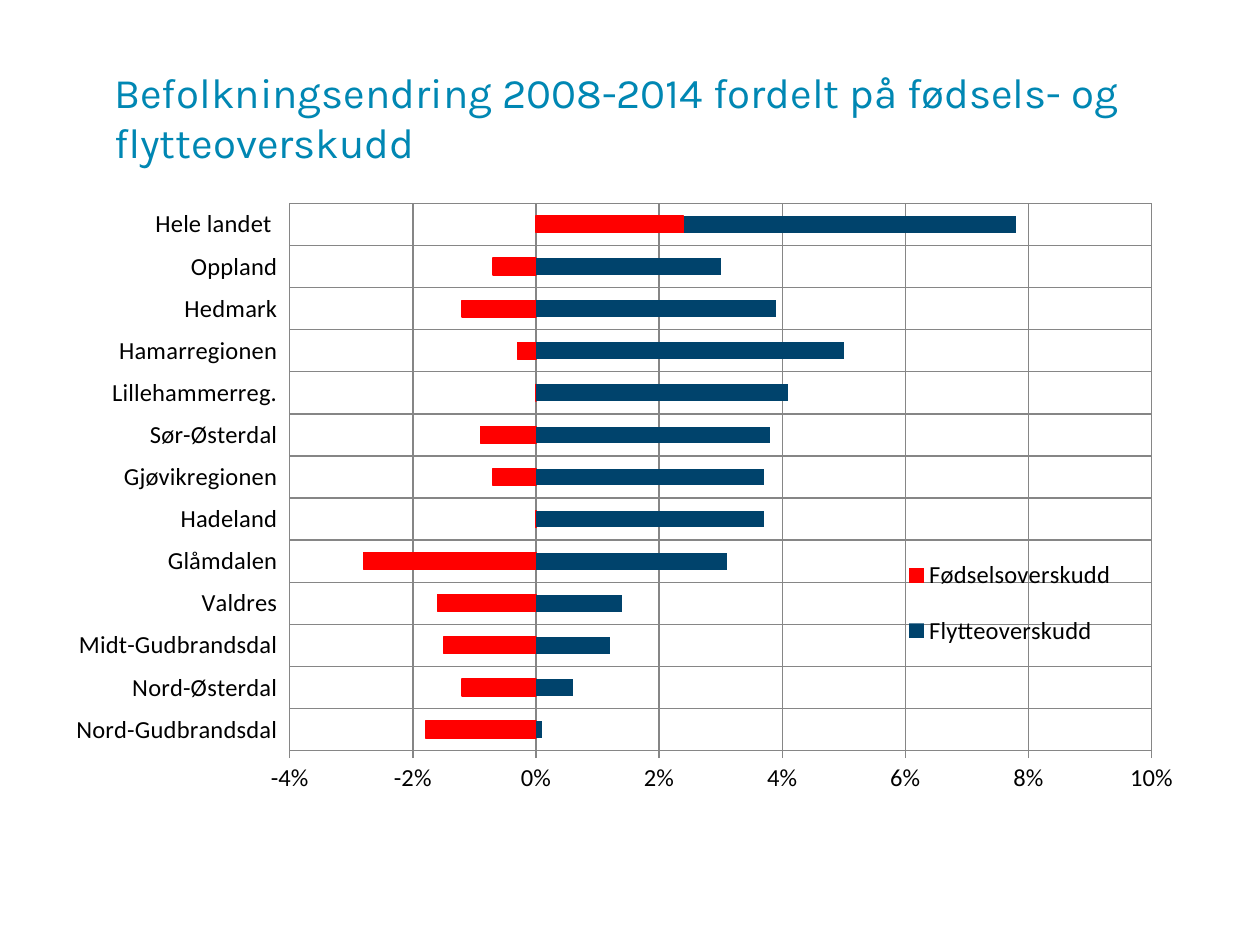
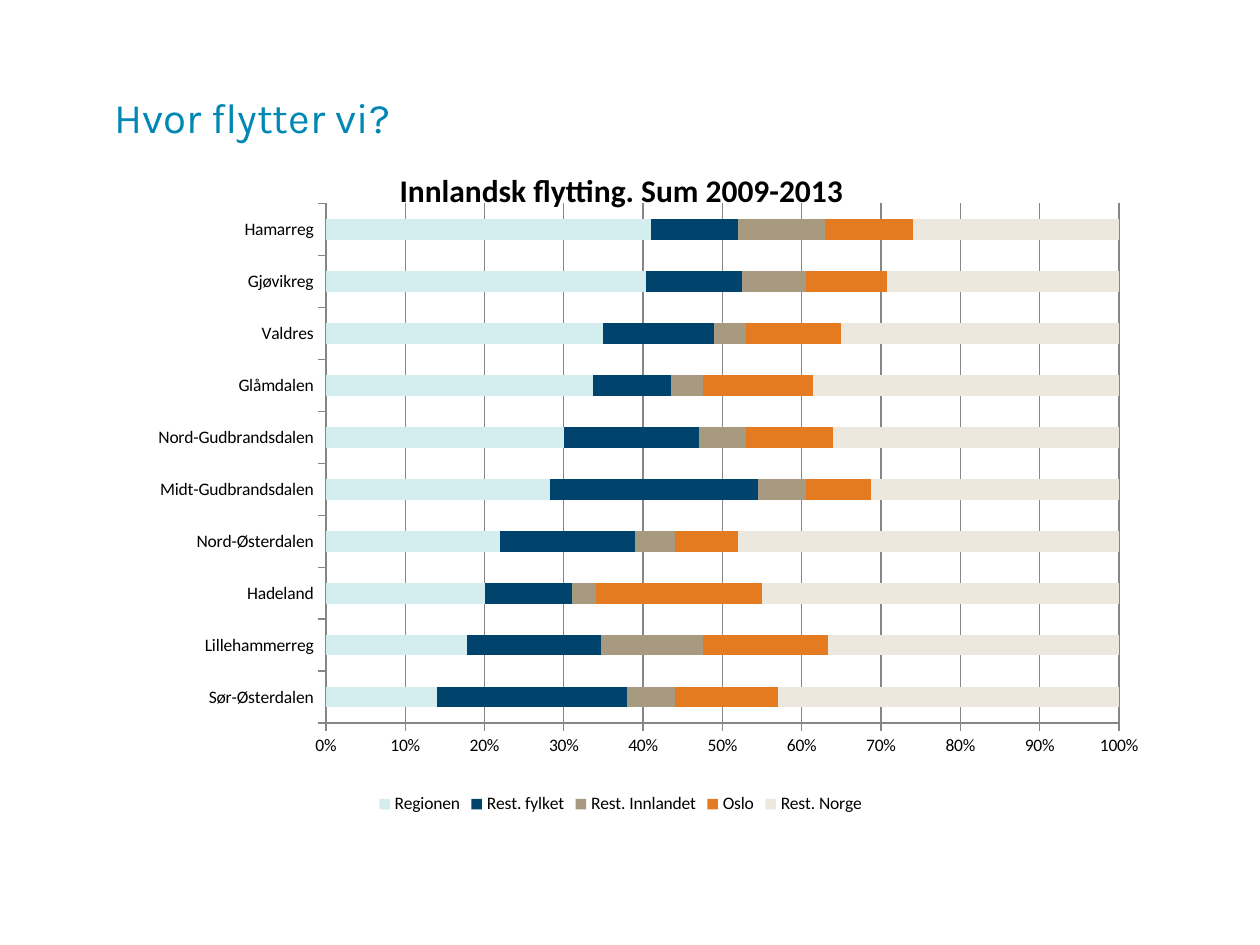
from lxml import etree
from pptx import Presentation
from pptx import util as u
from pptx.chart.data import CategoryChartData
from pptx.dml.color import RGBColor
from pptx.enum import chart as charts, text
from pptx.oxml import ns

PX_PER_INCH = 126
TITLE_BLUE = RGBColor(0x00, 0x87, 0xB3)
BLACK = RGBColor(0x00, 0x00, 0x00)
GRID_GREY = RGBColor(0x86, 0x86, 0x86)
RED = RGBColor(0xFF, 0x00, 0x00)
NAVY = RGBColor(0x00, 0x43, 0x6C)
PALE_TEAL = RGBColor(0xD4, 0xED, 0xEF)
TAUPE = RGBColor(0xA8, 0x9A, 0x80)
ORANGE = RGBColor(0xE5, 0x7B, 0x20)
CREAM = RGBColor(0xEC, 0xE8, 0xDE)

TITLE_BOX = (102, 38, 1095, 157)
CHANGE_BOX = (63, 185, 1134, 615)
MOVES_BOX = (54, 135, 1133, 684)

CHANGE_REGIONS = [
    "Nord-Gudbrandsdal", "Nord-Østerdal", "Midt-Gudbrandsdal", "Valdres",
    "Glåmdalen", "Hadeland", "Gjøvikregionen", "Sør-Østerdal",
    "Lillehammerreg.", "Hamarregionen", "Hedmark", "Oppland", "Hele landet ",
]
CHANGE_SERIES = [
    ("Fødselsoverskudd", RED,
     [-0.018, -0.012, -0.015, -0.016, -0.028, 0, -0.007, -0.009, 0, -0.003,
      -0.012, -0.007, 0.024]),
    ("Flytteoverskudd", NAVY,
     [0.001, 0.006, 0.012, 0.014, 0.031, 0.037, 0.037, 0.038, 0.041, 0.05,
      0.039, 0.03, 0.054]),
]
MOVES_REGIONS = [
    "Sør-Østerdalen", "Lillehammerreg", "Hadeland", "Nord-Østerdalen",
    "Midt-Gudbrandsdalen", "Nord-Gudbrandsdalen", "Glåmdalen", "Valdres",
    "Gjøvikreg", "Hamarreg",
]
MOVES_SERIES = [
    ("Regionen", PALE_TEAL, [14, 18, 20, 22, 28, 30, 34, 35, 40, 41]),
    ("Rest. fylket", NAVY, [24, 17, 11, 17, 26, 17, 10, 14, 12, 11]),
    ("Rest. Innlandet", TAUPE, [6, 13, 3, 5, 6, 6, 4, 4, 8, 11]),
    ("Oslo", ORANGE, [13, 16, 21, 8, 8, 11, 14, 12, 10, 11]),
    ("Rest. Norge", CREAM, [43, 37, 45, 48, 31, 36, 39, 35, 29, 26]),
]


def px(length):
    """Turn pixels into EMU."""
    return u.Inches(length / PX_PER_INCH)


def write_text(frame, words, size, color, font, bold=False):
    """Put one formatted paragraph into a text frame."""
    paragraph = frame.paragraphs[0]
    run = paragraph.add_run()
    run.text = words
    run.font.size = u.Pt(size)
    run.font.color.rgb = color
    run.font.name = font
    run.font.bold = bold


def add_title(slide, words, box):
    """Add the slide title, centred vertically in its box."""
    shape = slide.shapes.add_textbox(*map(px, box))
    frame = shape.text_frame
    frame.word_wrap = True
    frame.vertical_anchor = text.MSO_ANCHOR.MIDDLE
    write_text(frame, words, size=24, color=TITLE_BLUE, font="Karla")


def set_layout(element, **fractions):
    """Fix a chart part at fractions of the chart area."""
    for old in element.findall(ns.qn("c:layout")):
        element.remove(old)
    layout = etree.Element(ns.qn("c:layout"))
    manual = etree.SubElement(layout, ns.qn("c:manualLayout"))
    settings = {"xMode": "edge", "yMode": "edge", **fractions}
    if element.tag == ns.qn("c:plotArea"):
        settings = {"layoutTarget": "inner", **settings}
    for name, value in settings.items():
        etree.SubElement(manual, ns.qn(f"c:{name}")).set("val", str(value))
    leading = [child for child in element
               if child.tag in (ns.qn("c:legendPos"), ns.qn("c:tx"))]
    element.insert(len(leading), layout)


def style_axis(axis, gridlines):
    """Set ticks, line and gridlines of an axis."""
    axis.major_tick_mark = charts.XL_TICK_MARK.OUTSIDE
    axis.minor_tick_mark = charts.XL_TICK_MARK.NONE
    axis.format.line.color.rgb = GRID_GREY
    axis.has_major_gridlines = gridlines
    if gridlines:
        axis.major_gridlines.format.line.color.rgb = GRID_GREY


def add_bars(slide, box, kind, regions, series_rows, size, legend, row_lines):
    """Add a stacked bar chart with a legend and percent axis."""
    data = CategoryChartData()
    data.categories = regions
    for name, _, values in series_rows:
        data.add_series(name, values)
    chart = slide.shapes.add_chart(kind, *map(px, box), data).chart
    chart.font.size = u.Pt(size)
    chart.font.name = "Calibri"
    chart.font.color.rgb = BLACK
    chart.has_title = False
    chart.has_legend = True
    chart.legend.position = legend
    chart.legend.include_in_layout = False
    plot = chart.plots[0]
    plot.gap_width = 150
    plot.overlap = 100
    plot.vary_by_categories = False
    for series, (_, color, _) in zip(plot.series, series_rows):
        series.invert_if_negative = False
        series.format.fill.solid()
        series.format.fill.fore_color.rgb = color
    style_axis(chart.category_axis, gridlines=row_lines)
    style_axis(chart.value_axis, gridlines=True)
    labels = chart.value_axis.tick_labels
    labels.number_format = "0%"
    labels.number_format_is_linked = False
    return chart


def add_change_chart(slide, box):
    """Add the population change by births and by moving."""
    chart = add_bars(slide, box, charts.XL_CHART_TYPE.BAR_STACKED,
                     CHANGE_REGIONS, CHANGE_SERIES, size=14,
                     legend=charts.XL_LEGEND_POSITION.RIGHT, row_lines=True)
    axis = chart.value_axis
    axis.minimum_scale, axis.maximum_scale, axis.major_unit = -0.04, 0.1, 0.02
    chart.category_axis.tick_label_position = charts.XL_TICK_LABEL_POSITION.LOW
    chart.category_axis.format.line.fill.background()
    births = chart.plots[0].series[0].format.line
    births.color.rgb = RED
    births.width = u.Pt(0.75)
    set_layout(chart.plots[0]._element.getparent(), x=0.2, y=0.03, w=0.76, h=0.89)
    set_layout(chart.legend._element, x=0.73, y=0.57, w=0.21, h=0.22)


def add_moves_chart(slide, box):
    """Add the shares of domestic moves by destination."""
    chart = add_bars(slide, box, charts.XL_CHART_TYPE.BAR_STACKED_100,
                     MOVES_REGIONS, MOVES_SERIES, size=10,
                     legend=charts.XL_LEGEND_POSITION.BOTTOM, row_lines=False)
    chart.value_axis.major_unit = 0.1
    chart.has_title = True
    write_text(chart.chart_title.text_frame, "Innlandsk flytting. Sum 2009-2013",
               size=18, color=BLACK, font="Calibri", bold=True)
    set_layout(chart.chart_title._element, x=0.3, y=0.04)
    set_layout(chart.plots[0]._element.getparent(), x=0.24, y=0.1, w=0.7, h=0.76)


def main():
    """Build both slides and save the presentation."""
    presentation = Presentation()
    presentation.slide_width = u.Inches(10)
    presentation.slide_height = u.Inches(7.5)
    pages = [
        ("Befolkningsendring 2008-2014 fordelt på fødsels- og flytteoverskudd",
         add_change_chart, CHANGE_BOX),
        ("Hvor flytter vi?", add_moves_chart, MOVES_BOX),
    ]
    for title, add_chart_region, box in pages:
        slide = presentation.slides.add_slide(presentation.slide_layouts[6])
        add_title(slide, title, TITLE_BOX)
        add_chart_region(slide, box)
    presentation.save("out.pptx")


if __name__ == "__main__":
    main()
